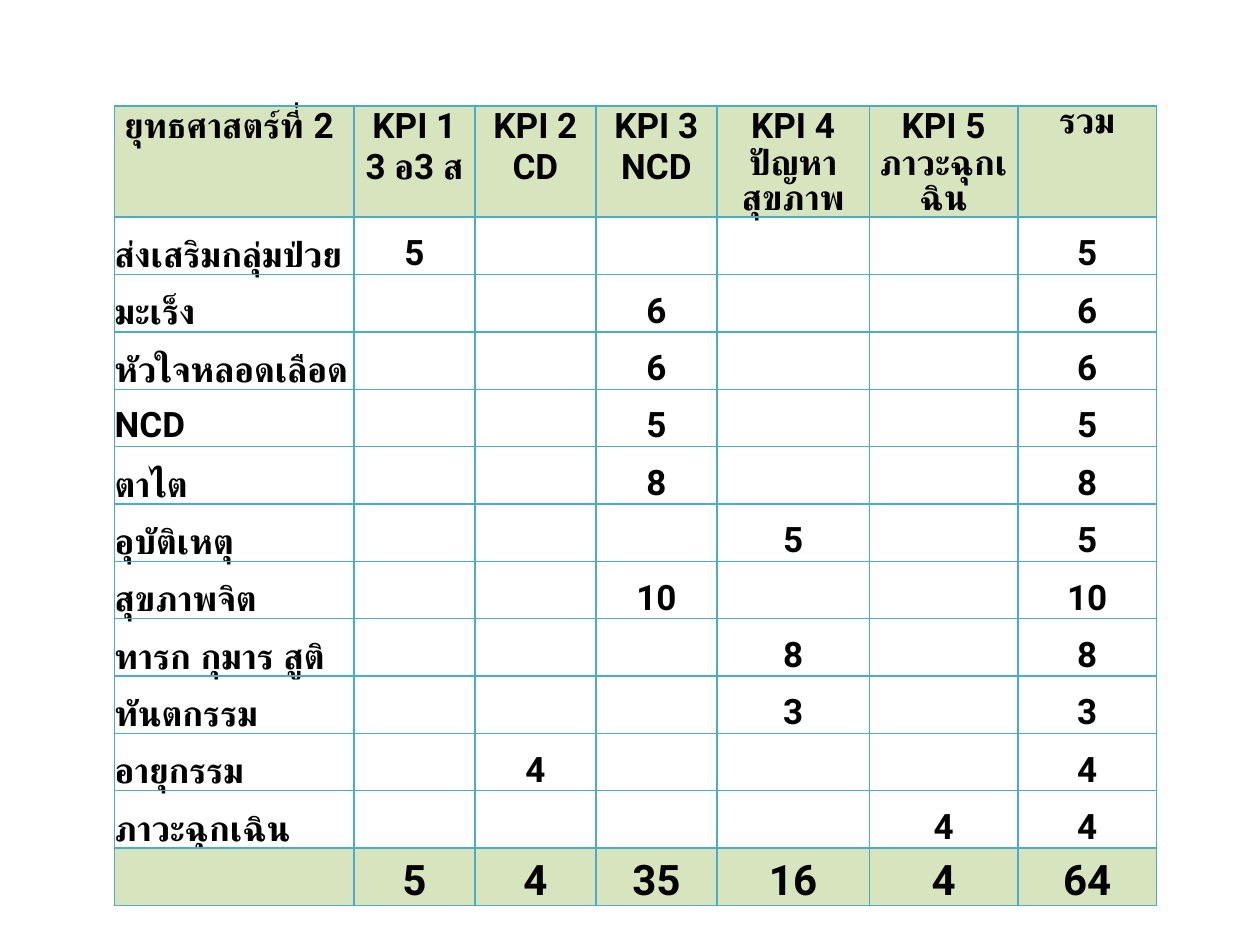
from dataclasses import dataclass

from lxml import etree
from pptx import Presentation
from pptx import util as u
from pptx.dml.color import RGBColor
from pptx.enum import text
from pptx.oxml import ns


@dataclass(frozen=True)
class Theme:
    font: str = "Roboto"
    ink: str = "000000"
    band: str = "D7E4BD"
    rule: str = "4BACC6"
    size: int = 20
    total: int = 24
    line: int = 1


@dataclass(frozen=True)
class Group:
    name: str
    kpi: int  # number of the KPI column
    count: int


THEME = Theme()
WIDE, HIGH = 10, 7.5
LEFT, TOP = 0.91, 0.84
COLS = [1.9, 0.96, 0.96, 0.96, 1.21, 1.18, 1.1]
ROWS_HIGH = 5.92

HEADS = [
    " ยุทธศาสตร์ที่ 2",
    "KPI 1\n3 อ3 ส",
    "KPI 2\nCD",
    "KPI 3\nNCD",
    "KPI 4\nปัญหาสุขภาพ",
    "KPI 5\nภาวะฉุกเฉิน",
    "รวม",
]
GROUPS = [
    Group("ส่งเสริมกลุ่มป่วย", 1, 5),
    Group("มะเร็ง", 3, 6),
    Group("หัวใจหลอดเลือด", 3, 6),
    Group("NCD", 3, 5),
    Group("ตาไต", 3, 8),
    Group("อุบัติเหตุ", 4, 5),
    Group("สุขภาพจิต", 3, 10),
    Group("ทารก กุมาร สูติ", 4, 8),
    Group("ทันตกรรม", 4, 3),
    Group("อายุกรรม", 2, 4),
    Group("ภาวะฉุกเฉิน", 5, 4),
]


def get_rows() -> list[list[str]]:
    """Heads, one row per group, then the sums of each KPI."""
    kpis = range(1, len(HEADS) - 1)
    body = [
        [g.name, *(str(g.count) if k == g.kpi else "" for k in kpis), str(g.count)]
        for g in GROUPS
    ]
    sums = [sum(g.count for g in GROUPS if g.kpi == k) for k in kpis]
    return [HEADS, *body, ["", *map(str, sums), str(sum(sums))]]


def rule_cell(cell) -> None:
    """Draw the four borders, which must come first in the cell's properties."""
    props = cell._tc.get_or_add_tcPr()
    for i, side in enumerate(("lnL", "lnR", "lnT", "lnB")):
        line = etree.Element(ns.qn(f"a:{side}"), w=str(u.Pt(THEME.line)))
        fill = etree.SubElement(line, ns.qn("a:solidFill"))
        etree.SubElement(fill, ns.qn("a:srgbClr"), val=THEME.rule)
        props.insert(i, line)


def fill_cell(cell, words: str, size: int, align, anchor, band: bool) -> None:
    cell.margin_left = cell.margin_right = 0
    cell.margin_top = cell.margin_bottom = 0
    cell.vertical_anchor = anchor
    if band:
        cell.fill.solid()
        cell.fill.fore_color.rgb = RGBColor.from_string(THEME.band)
    else:
        cell.fill.background()
    rule_cell(cell)
    cell.text_frame.text = words
    for para in cell.text_frame.paragraphs:
        para.alignment = align
        font = para.font
        font.name, font.size, font.bold = THEME.font, u.Pt(size), True
        font.color.rgb = RGBColor.from_string(THEME.ink)


def draw_table(slide, rows: list[list[str]]) -> None:
    last = len(rows) - 1
    frame = slide.shapes.add_table(
        len(rows), len(COLS), u.Inches(LEFT), u.Inches(TOP),
        u.Inches(sum(COLS)), u.Inches(ROWS_HIGH),
    )
    table = frame.table
    table.first_row = table.horz_banding = False
    for col, wide in zip(table.columns, COLS):
        col.width = u.Inches(wide)
    for r, row in enumerate(rows):
        size = THEME.total if r == last else THEME.size
        anchor = text.MSO_ANCHOR.BOTTOM if r else text.MSO_ANCHOR.TOP
        for c, words in enumerate(row):
            align = text.PP_ALIGN.CENTER if c else text.PP_ALIGN.LEFT
            fill_cell(table.cell(r, c), words, size, align, anchor, r in (0, last))


def main() -> None:
    deck = Presentation()
    deck.slide_width, deck.slide_height = u.Inches(WIDE), u.Inches(HIGH)
    slide = deck.slides.add_slide(deck.slide_layouts[6])
    draw_table(slide, get_rows())
    deck.save("out.pptx")


if __name__ == "__main__":
    main()
